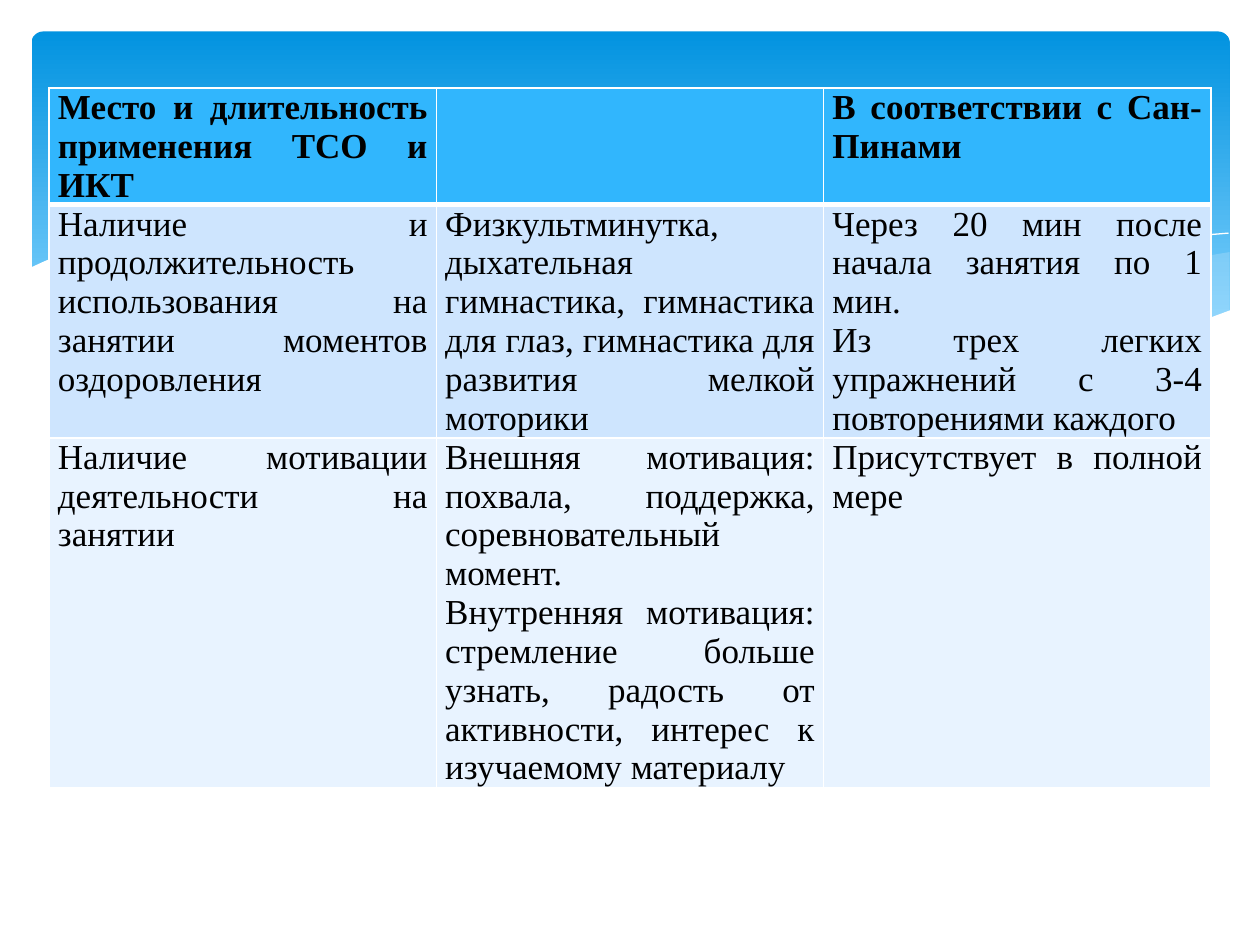
from dataclasses import dataclass
from typing import Optional

from lxml import etree
from pptx import Presentation
from pptx.dml.color import RGBColor
from pptx.enum.shapes import MSO_SHAPE
from pptx.enum.text import PP_ALIGN
from pptx.oxml.ns import qn
from pptx.util import Inches, Pt

ROUNDED = MSO_SHAPE.ROUNDED_RECTANGLE
JUSTIFY = PP_ALIGN.JUSTIFY
FONT = "Times New Roman"
COLORS = {
    "banner_top": "0293E0", "banner_bottom": "83D3FE",
    "pale_wave": "C6E7FC", "white": "FFFFFF", "text": "000000",
    "header": "31B6FD", "odd_row": "CEE5FE", "even_row": "E8F3FF",
}


@dataclass
class Wave:
    points: list[tuple[float, float]]
    fill: Optional[str] = None  # without a fill the wave is an open white line
    opacity: int = 100


@dataclass
class Row:
    fill: str
    height: float
    top_border: float
    bottom_border: float
    cells: list[str]
    bold: bool = False


WAVES = [
    Wave([(9.76, 2), (9.35, 2.07), (8.91, 2.16), (8.32, 2.3), (7.79, 2.42),
          (7.29, 2.53), (6.61, 2.65), (7.05, 2.71), (7.57, 2.76), (8.14, 2.78),
          (8.63, 2.75), (9.05, 2.69), (9.42, 2.59), (9.76, 2.47)], "pale_wave", 29),
    Wave([(8.93, 2.73), (8.37, 2.65), (7.75, 2.54), (7.06, 2.4), (6.29, 2.22),
          (5.69, 2.08), (5.14, 1.98), (4.65, 1.91), (4.2, 1.87), (3.8, 1.85),
          (3.28, 1.87), (2.86, 1.91), (3.42, 1.99), (4.04, 2.11), (4.91, 2.32),
          (5.66, 2.48), (6.34, 2.61), (6.95, 2.7), (7.48, 2.76), (8.07, 2.78),
          (8.57, 2.77)], "pale_wave", 40),
    Wave([(3.09, 1.95), (3.44, 1.9), (3.87, 1.87), (4.33, 1.87), (4.89, 1.9),
          (5.56, 1.97), (6.36, 2.08), (7.27, 2.26), (7.95, 2.41), (8.69, 2.61),
          (9.07, 2.72)]),
    Wave([(6.13, 2.57), (6.72, 2.41), (7.48, 2.23), (8.06, 2.1), (8.66, 1.99),
          (9.1, 1.92), (9.51, 1.87), (9.75, 1.85)]),
    Wave([(9.77, 2.46), (9.5, 2.56), (9.1, 2.67), (8.63, 2.74), (8.09, 2.77),
          (7.44, 2.74), (6.68, 2.65), (5.79, 2.5), (5.03, 2.33), (4.18, 2.13),
          (3.4, 1.97), (2.71, 1.88), (2.11, 1.84), (1.61, 1.84), (1.19, 1.87),
          (0.85, 1.93), (0.52, 2.01), (0.36, 2.07), (0.23, 2.13), (0.23, 3.29),
          (9.77, 3.29)], "white"),
]

ROWS = [
    Row("header", 0.92, 1, 3, [
        "Место и длительность применения ТСО и ИКТ",
        "",
        "В соответствии с Сан-Пинами"], bold=True),
    Row("odd_row", 1.85, 3, 1, [
        "Наличие и продолжительность использования на занятии моментов оздоровления",
        "Физкультминутка, дыхательная гимнастика, гимнастика для глаз, "
        "гимнастика для развития мелкой моторики",
        "Через 20 мин после начала занятия по 1 мин.\n"
        "Из трех легких упражнений с 3-4 повторениями каждого"]),
    Row("even_row", 2.77, 1, 1, [
        "Наличие мотивации деятельности на занятии",
        "Внешняя мотивация: похвала, поддержка, соревновательный момент.\n"
        "Внутренняя мотивация: стремление больше узнать, радость от активности, "
        "интерес к изучаемому материалу",
        "Присутствует в полной мере"]),
]


def color(name: str) -> RGBColor:
    return RGBColor.from_string(COLORS[name])


def add_banner(slide) -> None:
    banner = slide.shapes.add_shape(
        ROUNDED, Inches(0.25), Inches(0.25), Inches(9.51), Inches(2.7))
    banner.adjustments[0] = 0.034
    banner.shadow.inherit = False
    banner.line.fill.background()
    banner.fill.gradient()
    banner.fill.gradient_angle = 270
    stops = zip(banner.fill.gradient_stops, (0, 0.9), ("banner_top", "banner_bottom"))
    for stop, position, name in stops:
        stop.position = position
        stop.color.rgb = color(name)


def add_wave(slide, wave: Wave) -> None:
    points = [(Inches(x), Inches(y)) for x, y in wave.points]
    builder = slide.shapes.build_freeform(*points[0])
    builder.add_line_segments(points[1:], close=wave.fill is not None)
    shape = builder.convert_to_shape()
    shape.shadow.inherit = False
    if wave.fill is None:
        shape.fill.background()
        shape.line.color.rgb = color("white")
        shape.line.width = Pt(0)
        return
    shape.line.fill.background()
    shape.fill.solid()
    shape.fill.fore_color.rgb = color(wave.fill)
    if wave.opacity < 100:
        rgb = shape.fill._xPr.find(".//" + qn("a:srgbClr"))
        etree.SubElement(rgb, qn("a:alpha"), val=str(wave.opacity * 1000))


def add_borders(cell, top: float, bottom: float) -> None:
    properties = cell._tc.get_or_add_tcPr()
    for side, width in (("L", 1), ("R", 1), ("T", top), ("B", bottom)):
        border = etree.SubElement(properties, qn(f"a:ln{side}"), w=str(Pt(width)))
        fill = etree.SubElement(border, qn("a:solidFill"))
        etree.SubElement(fill, qn("a:srgbClr"), val=COLORS["white"])


def fill_cell(cell, text: str, row: Row) -> None:
    add_borders(cell, row.top_border, row.bottom_border)
    cell.fill.solid()
    cell.fill.fore_color.rgb = color(row.fill)
    cell.margin_left = cell.margin_right = Inches(0.07)
    cell.margin_top = cell.margin_bottom = 0
    cell.text = text
    for paragraph in cell.text_frame.paragraphs:
        paragraph.alignment = JUSTIFY
        paragraph.font.name = FONT
        paragraph.font.size = Pt(20)
        paragraph.font.bold = row.bold
        paragraph.font.color.rgb = color("text")


def add_lesson_table(slide, rows: list[Row]) -> None:
    height = sum(row.height for row in rows)
    table = slide.shapes.add_table(
        len(rows), len(rows[0].cells),
        Inches(0.39), Inches(0.7), Inches(9.22), Inches(height)).table
    for table_row, row in zip(table.rows, rows):
        table_row.height = Inches(row.height)
        for cell, text in zip(table_row.cells, row.cells):
            fill_cell(cell, text, row)


def main() -> None:
    presentation = Presentation()
    presentation.slide_width = Inches(10)
    presentation.slide_height = Inches(7.5)
    # The slide has no title, so it uses the blank layout
    slide = presentation.slides.add_slide(presentation.slide_layouts[6])

    # Background banner and waves
    add_banner(slide)
    for wave in WAVES:
        add_wave(slide, wave)

    # Lesson requirements
    add_lesson_table(slide, ROWS)
    presentation.save("out.pptx")


if __name__ == "__main__":
    main()
